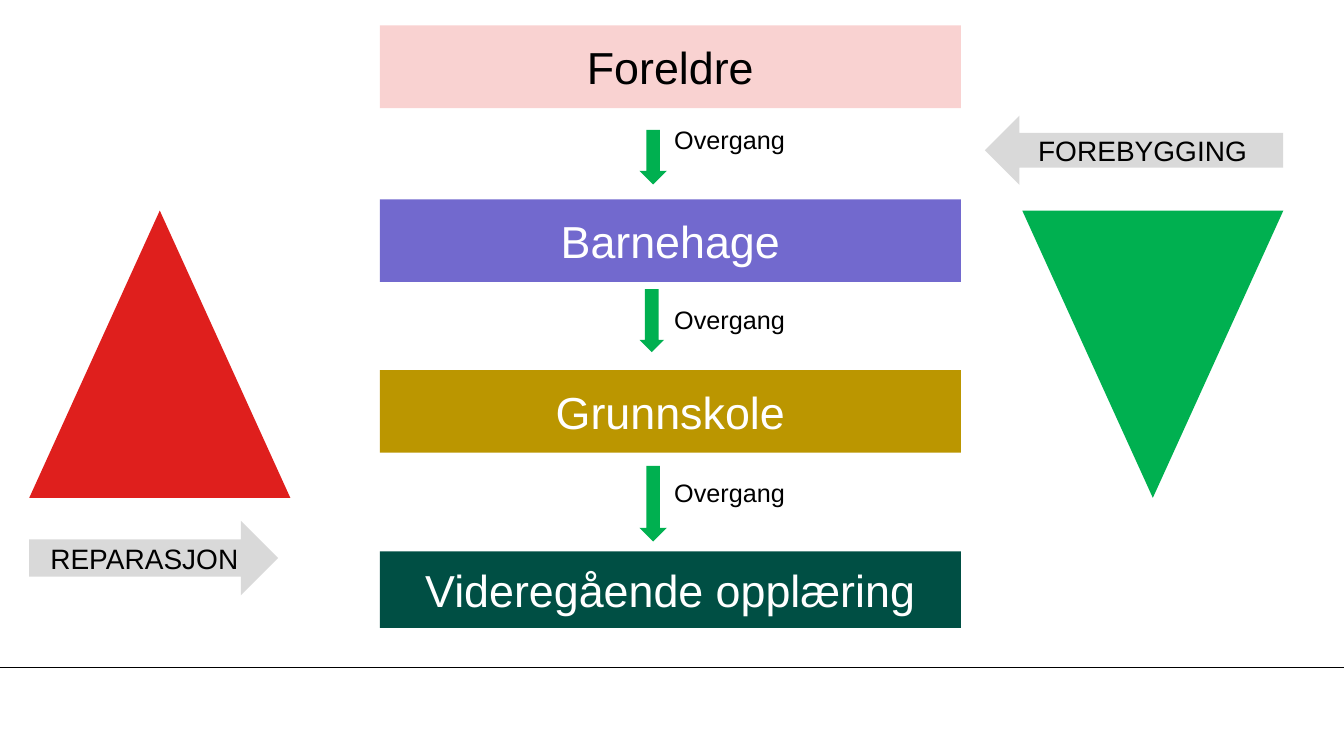
from lxml import etree
from pptx import Presentation
from pptx.dml.color import RGBColor
from pptx.enum import shapes, text
from pptx.oxml.ns import qn
from pptx.util import Pt

GREEN, GREY, BLACK, WHITE = "00B050", "D9D9D9", "000000", "FFFFFF"
MSO = shapes.MSO_SHAPE

prs = Presentation()
prs.slide_width, prs.slide_height = Pt(960), Pt(540)
s = prs.slides.add_slide(prs.slide_layouts[6])


def write(sp, words, size=18, color=BLACK, align=text.PP_ALIGN.CENTER,
          anchor=text.MSO_ANCHOR.MIDDLE, wrap=True):
    tf = sp.text_frame
    tf.word_wrap = wrap
    tf.vertical_anchor = anchor
    p = tf.paragraphs[0]
    p.alignment = align
    r = p.add_run()
    r.text = words
    r.font.name = "Arial"
    r.font.size = Pt(size)
    r.font.color.rgb = RGBColor.from_string(color)


def add_shape(kind, x, y, w, h, fill):
    sp = s.shapes.add_shape(kind, Pt(x), Pt(y), Pt(w), Pt(h))
    sp.shadow.inherit = False
    sp.fill.solid()
    sp.fill.fore_color.rgb = RGBColor.from_string(fill)
    sp.line.fill.background()
    return sp


rule = s.shapes.add_connector(shapes.MSO_CONNECTOR.STRAIGHT, 0, Pt(476.6), Pt(960), Pt(476.6))
rule.line.color.rgb = RGBColor.from_string(BLACK)
rule.line.width = Pt(0.75)
etree.SubElement(rule._element.spPr, qn("a:effectLst"))

stages = [
    ("Foreldre", 18.2, 59, "F9D2D1", BLACK),
    ("Barnehage", 142.4, 59, "7269CE", WHITE),
    ("Grunnskole", 264.3, 59, "BB9600", WHITE),
    ("Videregående opplæring", 393.8, 54.8, "004F44", WHITE),
]
for name, y, h, fill, color in stages:
    sp = add_shape(MSO.RECTANGLE, 271.4, y, 415, h, fill)
    write(sp, name, size=32, color=color)

transitions = [
    (92.8, 19.5, 39, 0.5, 85),
    (206.5, 17.5, 45, 0.56, 213.8),
    (332.8, 19.5, 54, 0.5, 337.5),
]
for y, w, h, shaft, label_y in transitions:
    sp = add_shape(MSO.DOWN_ARROW, 456.8, y, w, h, GREEN)
    sp.adjustments[0] = shaft
    label = s.shapes.add_textbox(Pt(474.5), Pt(label_y), Pt(94.3), Pt(28.8))
    write(label, "Overgang", align=text.PP_ALIGN.LEFT,
          anchor=text.MSO_ANCHOR.TOP, wrap=False)

for x, fill, rotation in [(20.9, "DF1F1D", 0), (730.2, GREEN, 180)]:
    sp = add_shape(MSO.ISOSCELES_TRIANGLE, x, 150.4, 186.5, 205.2, fill)
    sp.rotation = rotation

efforts = [
    ("REPARASJON", MSO.RIGHT_ARROW, 20.9, 372, 177.8, 53.2),
    ("FOREBYGGING", MSO.LEFT_ARROW, 703.5, 82.6, 213, 49.5),
]
for name, kind, x, y, w, h in efforts:
    write(add_shape(kind, x, y, w, h, GREY), name, size=20)

prs.save("out.pptx")
